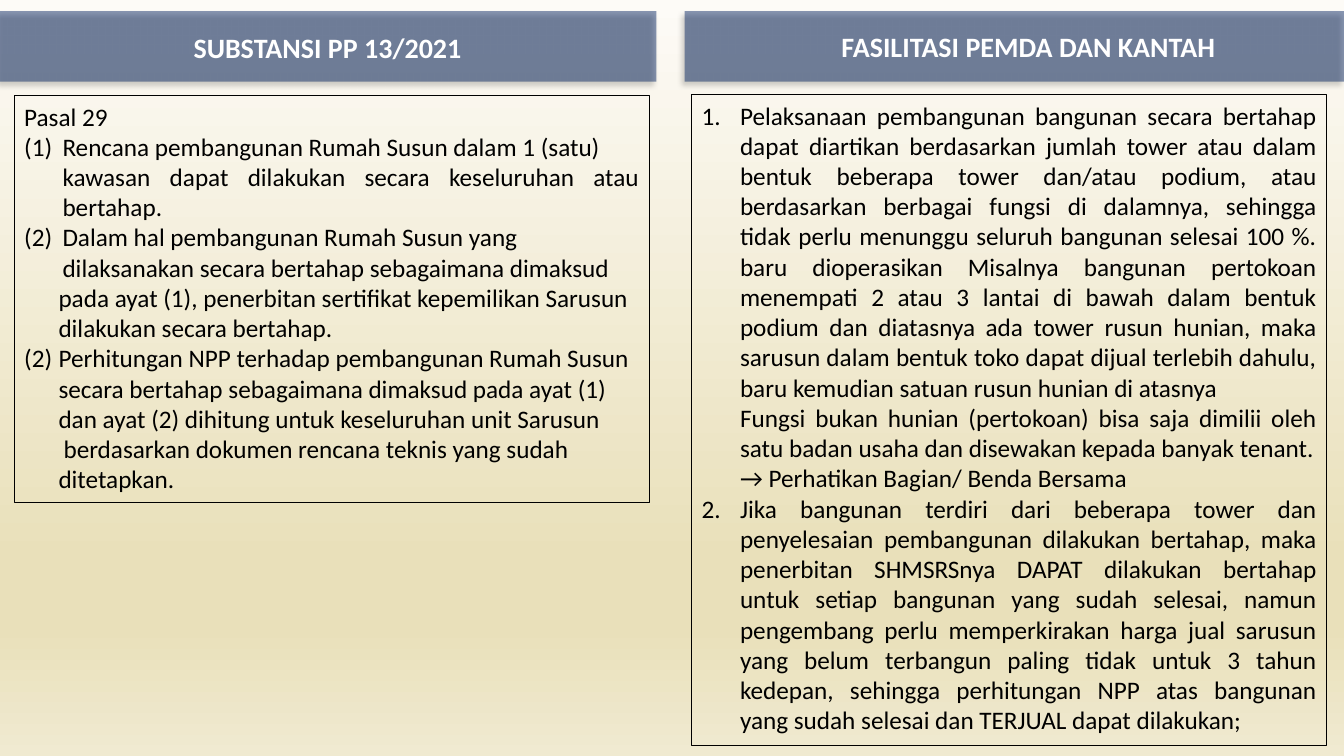
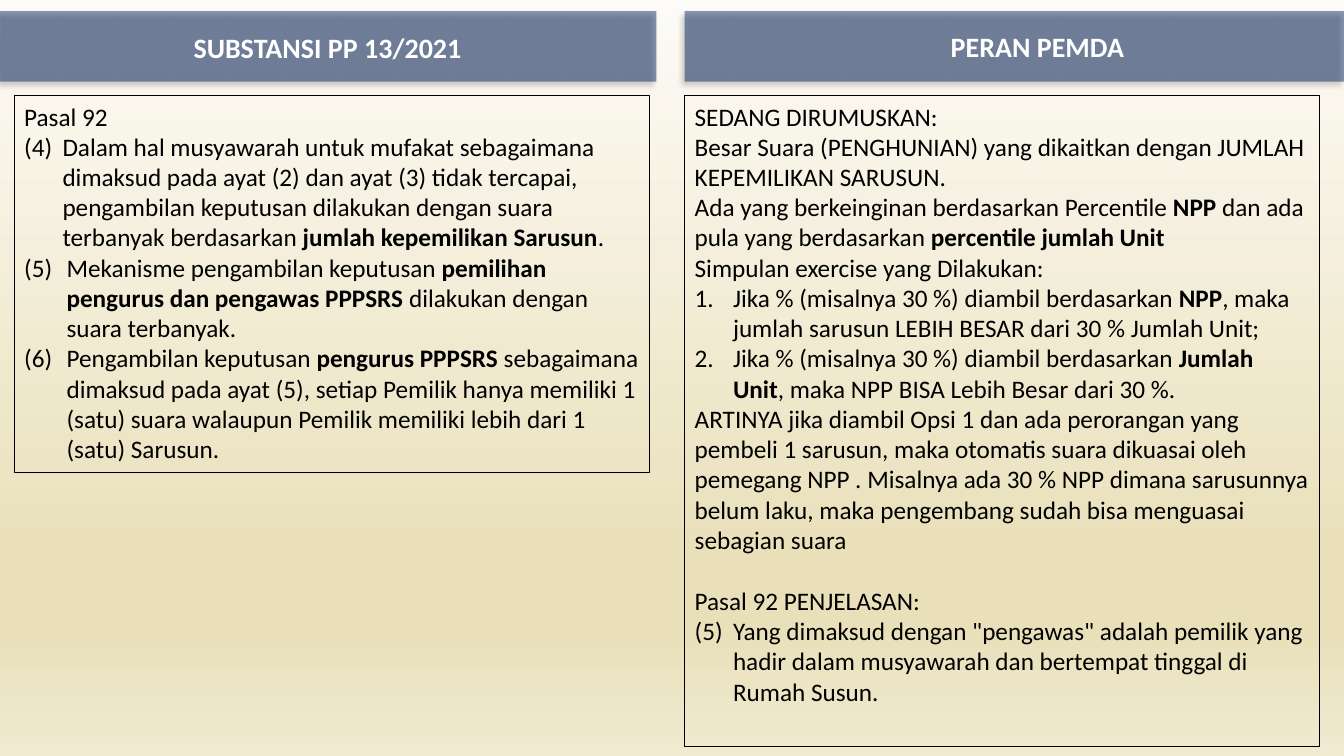
"""Build two comparison slides on regulation PP 13/2021."""
from dataclasses import dataclass

from lxml.etree import SubElement
from pptx import Presentation
from pptx.dml.color import RGBColor
from pptx.enum.shapes import MSO_SHAPE
from pptx.enum.text import MSO_ANCHOR, MSO_AUTO_SIZE, PP_ALIGN
from pptx.oxml.ns import qn
from pptx.util import Inches, Pt

COLORS = {
    "band": "002060",
    "heading": "FFFFFF",
    "ink": "000000",
    "sky": "FDFBF7",
    "sand": "E9E0BA",
    "dune": "F0EAD1",
}
BACKDROP = ((0, "sky"), (74, "sand"), (83, "sand"), (100, "dune"))
FONT = "Calibri"
BANDS = ((0, 6.51), (6.79, 6.54))
BAND_TOP, BAND_HEIGHT = 0.11, 0.7
HEADING_HEIGHT = 0.44
PANEL_WIDTH = 6.3


@dataclass(frozen=True)
class Clause:
    """Paragraph whose asterisks switch bold on and off."""
    text: str
    left: float = 0
    hanging: bool = False
    numbering: str = ""
    start: int = 1
    before: float = 0


@dataclass(frozen=True)
class Heading:
    """Text and place of a band heading."""
    text: str
    left: float
    top: float
    width: float


@dataclass(frozen=True)
class Panel:
    """Outlined column of clauses."""
    left: float
    top: float
    height: float
    clauses: tuple[Clause, ...]
    align: PP_ALIGN = PP_ALIGN.LEFT


@dataclass(frozen=True)
class Comparison:
    """Headings and panels of one slide."""
    headings: tuple[Heading, Heading]
    panels: tuple[Panel, Panel]


def numbered(text: str, start: int = 1, style: str = "arabicPeriod") -> Clause:
    """Return an automatically numbered clause."""
    return Clause(text, 0.38, True, style, start)


REGULATION = Heading("SUBSTANSI PP 13/2021", 1.81, 0.25, 2.88)

COMPARISONS = (
    Comparison(
        (REGULATION, Heading("FASILITASI PEMDA DAN KANTAH", 8.2, 0.24, 4)),
        (
            Panel(0.14, 0.95, 4.04, (
                Clause("Pasal 29"),
                numbered("Rencana pembangunan Rumah Susun dalam 1 (satu)",
                         style="arabicParenBoth"),
                Clause("kawasan dapat dilakukan secara keseluruhan atau bertahap.", 0.38),
                Clause("(2)\tDalam hal pembangunan Rumah Susun yang", 0.38, True),
                Clause("dilaksanakan secara bertahap sebagaimana dimaksud", 0.38),
                Clause("pada ayat (1), penerbitan sertifikat kepemilikan Sarusun", 0.34),
                Clause("dilakukan secara bertahap.", 0.34),
                Clause("(2)\tPerhitungan NPP terhadap pembangunan Rumah Susun", 0.34, True),
                Clause("secara bertahap sebagaimana dimaksud pada ayat (1)", 0.34),
                Clause("dan ayat (2) dihitung untuk keseluruhan unit Sarusun", 0.34),
                Clause("berdasarkan dokumen rencana teknis yang sudah", 0.39),
                Clause("ditetapkan.", 0.34),
            ), PP_ALIGN.JUSTIFY),
            Panel(6.86, 0.94, 6.46, (
                numbered(
                    "Pelaksanaan pembangunan bangunan secara bertahap dapat diartikan "
                    "berdasarkan jumlah tower atau dalam bentuk beberapa tower dan/atau "
                    "podium, atau berdasarkan berbagai fungsi di dalamnya, sehingga tidak "
                    "perlu menunggu seluruh bangunan selesai 100 %. baru dioperasikan "
                    "Misalnya bangunan pertokoan menempati 2 atau 3 lantai di bawah dalam "
                    "bentuk podium dan diatasnya ada tower rusun hunian, maka sarusun dalam "
                    "bentuk toko dapat dijual terlebih dahulu, baru kemudian satuan rusun "
                    "hunian di atasnya"),
                Clause("Fungsi bukan hunian (pertokoan) bisa saja dimilii oleh satu badan "
                       "usaha dan disewakan kepada banyak tenant.", 0.38),
                Clause("→ Perhatikan Bagian/ Benda Bersama", 0.38),
                numbered(
                    "Jika bangunan terdiri dari beberapa tower dan penyelesaian "
                    "pembangunan dilakukan bertahap, maka penerbitan SHMSRSnya DAPAT "
                    "dilakukan bertahap untuk setiap bangunan yang sudah selesai, namun "
                    "pengembang perlu memperkirakan harga jual sarusun yang belum "
                    "terbangun paling tidak untuk 3 tahun kedepan, sehingga perhitungan "
                    "NPP atas bangunan yang sudah selesai dan TERJUAL dapat dilakukan;", 2),
            ), PP_ALIGN.JUSTIFY),
        ),
    ),
    Comparison(
        (REGULATION, Heading("PERAN PEMDA", 9.29, 0.24, 2)),
        (
            Panel(0.14, 0.95, 3.74, (
                Clause("Pasal 92"),
                Clause("(4)\tDalam hal musyawarah untuk mufakat sebagaimana dimaksud pada "
                       "ayat (2) dan ayat (3) tidak tercapai, pengambilan keputusan "
                       "dilakukan dengan suara terbanyak berdasarkan *jumlah kepemilikan "
                       "Sarusun*.", 0.38, True),
                Clause("(5)\tMekanisme pengambilan keputusan *pemilihan pengurus dan "
                       "pengawas PPPSRS *dilakukan dengan suara terbanyak.", 0.42, True),
                Clause("(6)\tPengambilan keputusan *pengurus PPPSRS *sebagaimana dimaksud "
                       "pada ayat (5), setiap Pemilik hanya memiliki 1 (satu) suara "
                       "walaupun Pemilik memiliki lebih dari 1 (satu) Sarusun.", 0.42, True),
            )),
            Panel(6.79, 0.95, 6.46, (
                Clause("SEDANG DIRUMUSKAN:"),
                Clause("Besar Suara (PENGHUNIAN) yang dikaitkan dengan JUMLAH KEPEMILIKAN "
                       "SARUSUN."),
                Clause("Ada yang berkeinginan berdasarkan Percentile *NPP *dan ada pula "
                       "yang berdasarkan *percentile jumlah Unit*"),
                Clause("Simpulan exercise yang Dilakukan:"),
                numbered("Jika % (misalnya 30 %) diambil berdasarkan *NPP*, maka jumlah "
                         "sarusun LEBIH BESAR dari 30 % Jumlah Unit;"),
                numbered("Jika % (misalnya 30 %) diambil berdasarkan *Jumlah Unit*, maka "
                         "NPP BISA Lebih Besar dari 30 %."),
                Clause("ARTINYA jika diambil Opsi 1 dan ada perorangan yang pembeli 1 "
                       "sarusun, maka otomatis suara dikuasai oleh pemegang NPP . Misalnya "
                       "ada 30 % NPP dimana sarusunnya belum laku, maka pengembang sudah "
                       "bisa menguasai sebagian suara"),
                Clause("Pasal 92 PENJELASAN:", before=22),
                numbered('Yang dimaksud dengan "pengawas" adalah pemilik yang hadir dalam '
                         "musyawarah dan bertempat tinggal di Rumah Susun.",
                         5, "arabicParenBoth"),
            )),
        ),
    ),
)


def color(name: str) -> RGBColor:
    """Return a palette colour."""
    return RGBColor.from_string(COLORS[name])


def style_font(font, size: float, ink: str, bold: bool = False) -> None:
    """Apply the deck's typeface to a font."""
    font.name, font.size, font.bold = FONT, Pt(size), bold
    font.color.rgb = color(ink)


def place(shape, left: float, top: float, width: float, height: float) -> None:
    """Move and size a shape, in inches."""
    shape.left, shape.top = Inches(left), Inches(top)
    shape.width, shape.height = Inches(width), Inches(height)


def paint_backdrop(master) -> None:
    """Give the master its vertical gradient."""
    fill = master.background.fill
    fill.gradient()
    fill.gradient_angle = 270
    stops = master.element.find(".//" + qn("p:bg")).find(".//" + qn("a:gsLst"))
    for stop in list(stops):
        stops.remove(stop)
    for percent, name in BACKDROP:
        stop = SubElement(stops, qn("a:gs"), pos=str(percent * 1000))
        SubElement(stop, qn("a:srgbClr"), val=COLORS[name])


def add_band(slide, left: float, width: float) -> None:
    """Draw a translucent shadowed band behind the headings."""
    band = slide.shapes.add_shape(
        MSO_SHAPE.RECTANGLE, Inches(left), Inches(BAND_TOP),
        Inches(width), Inches(BAND_HEIGHT))
    band.fill.solid()
    band.fill.fore_color.rgb = color("band")
    band.line.fill.background()
    band.shadow.inherit = False
    properties = band.element.spPr
    SubElement(properties.find(".//" + qn("a:srgbClr")), qn("a:alpha"), val="46000")
    shadow = SubElement(properties.find(qn("a:effectLst")), qn("a:outerShdw"),
                        blurRad=str(Pt(4)), dist=str(Pt(3)), dir="8100000",
                        algn="tr", rotWithShape="0")
    tint = SubElement(shadow, qn("a:srgbClr"), val=COLORS["ink"])
    SubElement(tint, qn("a:alpha"), val="40000")
    slide.shapes.element.insert(2, band.element)


def fill_heading(shape, heading: Heading) -> None:
    """Place and format a band heading."""
    place(shape, heading.left, heading.top, heading.width, HEADING_HEIGHT)
    frame = shape.text_frame
    frame.text = heading.text
    frame.word_wrap = False
    frame.auto_size = MSO_AUTO_SIZE.NONE
    frame.vertical_anchor = MSO_ANCHOR.MIDDLE
    paragraph = frame.paragraphs[0]
    paragraph.alignment = PP_ALIGN.CENTER
    style_font(paragraph.runs[0].font, 20, "heading", True)


def write_clause(paragraph, clause: Clause, align: PP_ALIGN) -> None:
    """Write one clause with its indent, numbering and bold parts."""
    properties = paragraph._p.get_or_add_pPr()
    indent = Inches(clause.left)
    properties.set("marL", str(indent))
    properties.set("indent", str(-indent if clause.hanging else 0))
    if clause.numbering:
        SubElement(properties, qn("a:buFont"), typeface=FONT)
        SubElement(properties, qn("a:buAutoNum"), type=clause.numbering,
                   startAt=str(clause.start))
    else:
        SubElement(properties, qn("a:buNone"))
    paragraph.alignment = align
    paragraph.space_before = Pt(clause.before)
    for position, part in enumerate(clause.text.split("*")):
        if part:
            run = paragraph.add_run()
            run.text = part
            style_font(run.font, 18, "ink", position % 2 == 1)


def fill_panel(shape, panel: Panel) -> None:
    """Place, outline and fill a body placeholder."""
    place(shape, panel.left, panel.top, PANEL_WIDTH, panel.height)
    shape.line.color.rgb = color("ink")
    shape.line.width = Pt(0.75)
    frame = shape.text_frame
    frame.word_wrap = True
    frame.auto_size = MSO_AUTO_SIZE.NONE
    frame.vertical_anchor = MSO_ANCHOR.TOP
    for position, clause in enumerate(panel.clauses):
        paragraph = frame.add_paragraph() if position else frame.paragraphs[0]
        write_clause(paragraph, clause, panel.align)


def add_comparison(deck, comparison: Comparison) -> None:
    """Add one two-column slide."""
    slide = deck.slides.add_slide(deck.slide_layouts.get_by_name("Two Content"))
    for left, width in reversed(BANDS):
        add_band(slide, left, width)
    regulation, response = comparison.headings
    fill_heading(slide.shapes.title, regulation)
    fill_heading(slide.shapes.add_textbox(0, 0, 0, 0), response)
    for position, panel in enumerate(comparison.panels, start=1):
        fill_panel(slide.placeholders[position], panel)


def main() -> None:
    """Build and save the deck."""
    deck = Presentation()
    deck.slide_width, deck.slide_height = Inches(13.33), Inches(7.5)
    paint_backdrop(deck.slide_master)
    for comparison in COMPARISONS:
        add_comparison(deck, comparison)
    deck.save("out.pptx")


if __name__ == "__main__":
    main()
